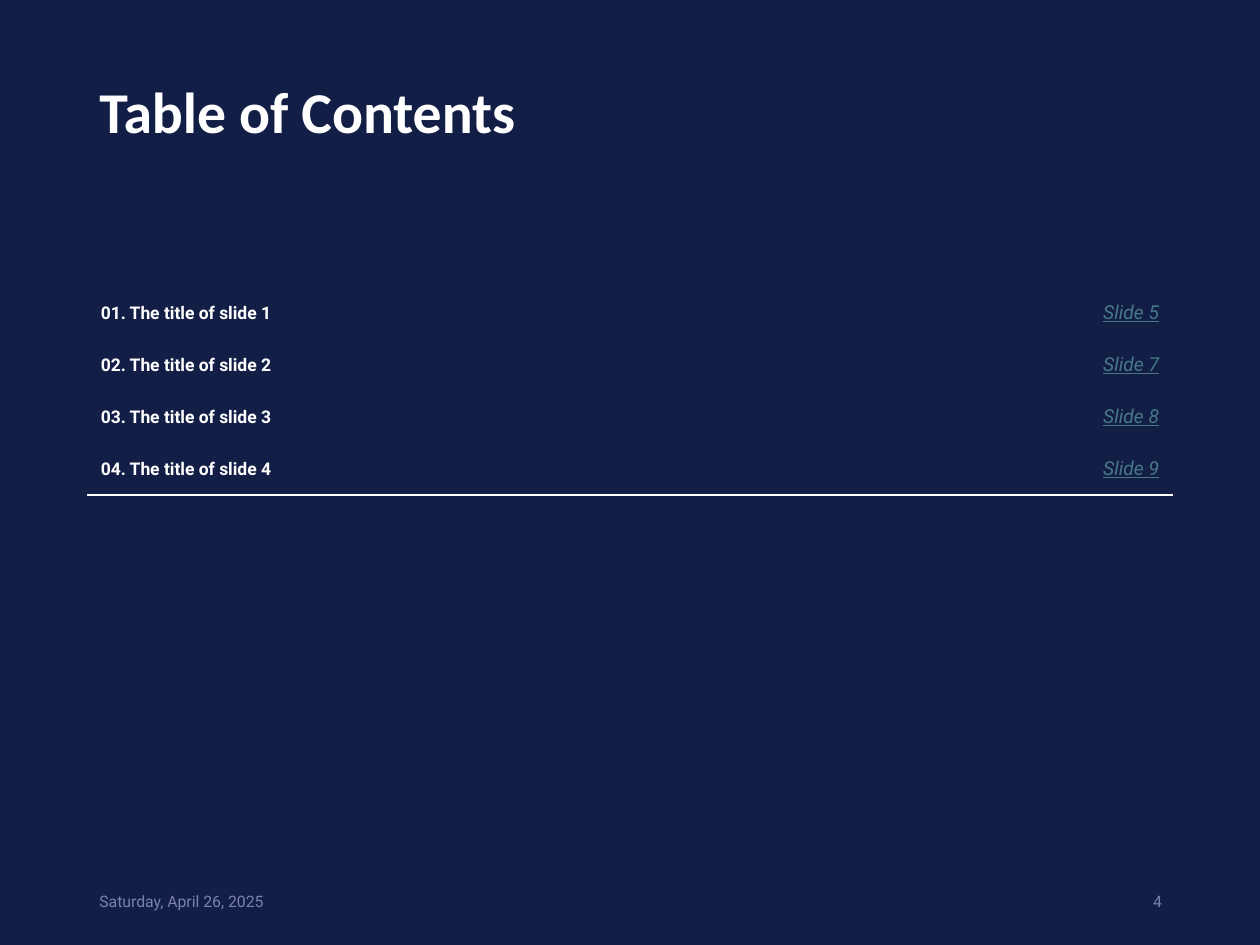
from lxml import etree
from pptx import Presentation
from pptx import util as u
from pptx.dml.color import RGBColor
from pptx.enum import text
from pptx.oxml import ns

WIDTH, HEIGHT = u.Inches(10), u.Inches(7.5)
NAVY, WHITE, MUTED, TEAL = "131E47", "FFFFFF", "7C82AA", "467886"
LEFT, RIGHT = text.PP_ALIGN.LEFT, text.PP_ALIGN.RIGHT
PLAIN_STYLE = "{2D5ABB26-0587-4C30-8999-92F81FD0307C}"

TITLE = {"name": "Calibri", "size": u.Pt(33), "bold": True}
FOOTER = {"name": "Roboto", "size": u.Pt(9)}
ENTRY = {"name": "Roboto", "size": u.Pt(10), "bold": True}
TARGET = {"name": "Roboto", "size": u.Pt(11), "italic": True, "underline": True}

ENTRIES = [
    ("01. The title of slide 1", "Slide 5"),
    ("02. The title of slide 2", "Slide 7"),
    ("03. The title of slide 3", "Slide 8"),
    ("04. The title of slide 4", "Slide 9"),
]


def color(value):
    return RGBColor.from_string(value)


def share(left, top, width, height):
    return [int(WIDTH * left), int(HEIGHT * top), int(WIDTH * width), int(HEIGHT * height)]


def write(paragraph, wording, look, ink, align=LEFT):
    paragraph.alignment = align
    run = paragraph.add_run()
    run.text = wording
    for key, value in look.items():
        setattr(run.font, key, value)
    run.font.color.rgb = color(ink)


def add_line(slide, box, wording, look, ink, align=LEFT, spacing=1.0):
    frame = slide.shapes.add_textbox(*box).text_frame
    frame.word_wrap = True
    frame.vertical_anchor = text.MSO_ANCHOR.MIDDLE
    frame.paragraphs[0].line_spacing = spacing
    write(frame.paragraphs[0], wording, look, ink, align)


def rule_below(cell):
    properties = cell._tc.get_or_add_tcPr()
    for position, side in enumerate(("lnL", "lnR", "lnT", "lnB")):
        border = etree.Element(ns.qn(f"a:{side}"), w=str(u.Pt(1)))
        if side == "lnB":
            fill = etree.SubElement(border, ns.qn("a:solidFill"))
            etree.SubElement(fill, ns.qn("a:srgbClr"), val=WHITE)
        else:
            etree.SubElement(border, ns.qn("a:noFill"))
        properties.insert(position, border)


def add_contents(slide, box):
    frame = slide.shapes.add_table(len(ENTRIES), 2, *box)
    contents = frame.table
    contents.first_row = contents.horz_banding = False
    frame._element.find(".//" + ns.qn("a:tableStyleId")).text = PLAIN_STYLE
    for column, part in zip(contents.columns, (0.81, 0.19)):
        column.width = int(box[2] * part)
    cell_format = {f"margin_{side}": u.Inches(0.11) for side in ("left", "right", "top", "bottom")}
    cell_format["vertical_anchor"] = text.MSO_ANCHOR.MIDDLE
    columns = ((ENTRY, WHITE, LEFT), (TARGET, TEAL, RIGHT))
    for row, entry in zip(contents.rows, ENTRIES):
        for cell, wording, style in zip(row.cells, entry, columns):
            for key, value in cell_format.items():
                setattr(cell, key, value)
            cell.fill.background()
            rule_below(cell)
            write(cell.text_frame.paragraphs[0], wording, *style)


def add_footer(slide, box):
    left, top, width, height = box
    number_width = int(width * 0.14)
    add_line(slide, [left, top, int(width * 0.26), height],
             "Saturday, April 26, 2025", FOOTER, MUTED)
    add_line(slide, [left + width - number_width, top, number_width, height],
             "4", FOOTER, MUTED, RIGHT)


def main():
    deck = Presentation()
    deck.slide_width, deck.slide_height = WIDTH, HEIGHT
    slide = deck.slides.add_slide(deck.slide_layouts[6])
    slide.background.fill.solid()
    slide.background.fill.fore_color.rgb = color(NAVY)
    add_line(slide, share(0.069, 0.053, 0.84, 0.137), "Table of Contents", TITLE, WHITE, spacing=0.9)
    add_contents(slide, share(0.069, 0.304, 0.862, 0.22))
    add_footer(slide, share(0.069, 0.927, 0.863, 0.053))
    deck.save("out.pptx")


if __name__ == "__main__":
    main()
